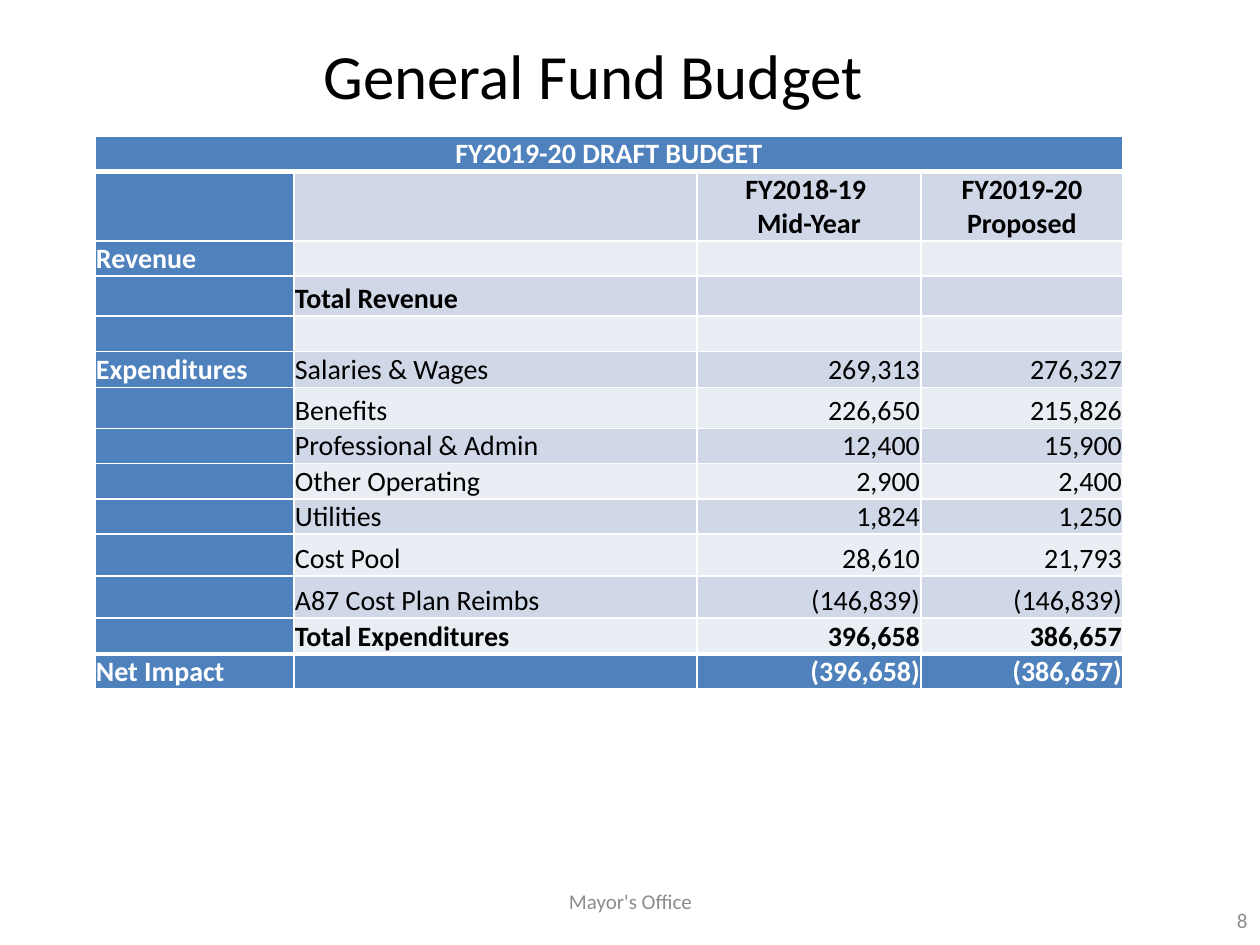
from dataclasses import dataclass

from lxml import etree
from pptx import Presentation
from pptx import util as u
from pptx.dml.color import RGBColor
from pptx.enum import text
from pptx.oxml.ns import qn

SCALE = 914400 / 126
LEFT, MID, RIGHT = text.PP_ALIGN.LEFT, text.PP_ALIGN.CENTER, text.PP_ALIGN.RIGHT


@dataclass(frozen=True)
class Theme:
    face: str = "Calibri"
    head: int = 36
    body: int = 16
    foot: int = 12
    ink: str = "000000"
    white: str = "FFFFFF"
    gray: str = "8C8C8C"
    blue: str = "4F81BD"
    bands: tuple = ("E9EDF4", "D0D8E8")


THEME = Theme()
COLS = [199, 403, 224, 202]
ROWS = [
    (35, ["FY2019-20 DRAFT BUDGET", "", "", ""]),
    (69, ["", "", "FY2018-19 \nMid-Year", "FY2019-20 Proposed"]),
    (35, ["Revenue", "", "", ""]),
    (40, ["", "Total Revenue", "", ""]),
    (35, ["", "", "", ""]),
    (36, ["Expenditures", "Salaries & Wages", "269,313", "276,327"]),
    (41, ["", "Benefits", "226,650", "215,826"]),
    (35, ["", "Professional & Admin", "12,400", "15,900"]),
    (35, ["", "Other Operating", "2,900", "2,400"]),
    (35, ["", "Utilities", "1,824", "1,250"]),
    (42, ["", "Cost Pool", "28,610", "21,793"]),
    (42, ["", "A87 Cost Plan Reimbs", "(146,839)", "(146,839)"]),
    (36, ["", "Total Expenditures", "396,658", "386,657"]),
    (35, ["Net Impact", "", "(396,658)", "(386,657)"]),
]
LAST = len(ROWS) - 1


def px(n):
    return u.Emu(round(n * SCALE))


def apply(item, **vals):
    for key, val in vals.items():
        setattr(item, key, val)


def place(shape, x, y, w, h):
    apply(shape, left=px(x), top=px(y), width=px(w), height=px(h))


def write(frame, words, size, color, align, bold=False):
    for i, line in enumerate(words.split("\n")):
        para = frame.paragraphs[0] if i == 0 else frame.add_paragraph()
        para.alignment = align
        run = para.add_run()
        run.text = line
        apply(run.font, name=THEME.face, size=u.Pt(size), bold=bold)
        run.font.color.rgb = RGBColor.from_string(color)


def edge(cell, side, width):
    props = cell._tc.get_or_add_tcPr()
    line = etree.SubElement(props, qn(f"a:ln{side}"), w=str(u.Pt(width)))
    fill = etree.SubElement(line, qn("a:solidFill"))
    etree.SubElement(fill, qn("a:srgbClr"), val=THEME.white)


def paint(cell, row, col, words):
    dark = row in (0, LAST) or col == 0
    bold = dark or row == 1 or words.startswith("Total") or row == LAST - 1
    align = MID if row < 2 else RIGHT if col > 1 else LEFT
    apply(cell, margin_left=px(1), margin_right=px(1), margin_top=px(1),
          margin_bottom=0, vertical_anchor=text.MSO_ANCHOR.BOTTOM)
    if words:
        write(cell.text_frame, words, THEME.body,
              THEME.white if dark else THEME.ink, align, bold)
    else:
        end = cell.text_frame.paragraphs[0]._p.get_or_add_endParaRPr()
        end.set("sz", str(THEME.body * 100))
    for side in "LRTB":
        thick = (side, row) in (("B", 0), ("T", 1), ("B", LAST - 1), ("T", LAST))
        edge(cell, side, 3 if thick else 1)
    cell.fill.solid()
    shade = THEME.blue if dark else THEME.bands[row % 2]
    cell.fill.fore_color.rgb = RGBColor.from_string(shade)


def add_budget(slide):
    high = sum(size for size, _ in ROWS)
    frame = slide.shapes.add_table(
        len(ROWS), len(COLS), px(95), px(136), px(sum(COLS)), px(high))
    grid = frame.table
    apply(grid, first_row=False, horz_banding=False)
    for col, wide in zip(grid.columns, COLS):
        col.width = px(wide)
    for r, (size, words) in enumerate(ROWS):
        grid.rows[r].height = px(size)
        for c, word in enumerate(words):
            paint(grid.cell(r, c), r, c, word)
    grid.cell(0, 0).merge(grid.cell(0, len(COLS) - 1))


def add_title(slide, words):
    title = slide.shapes.title
    place(title, 105, 32, 976, 84)
    apply(title.text_frame, word_wrap=True, vertical_anchor=text.MSO_ANCHOR.MIDDLE)
    write(title.text_frame, words, THEME.head, THEME.ink, MID)


def add_foot(slide, words, box, align):
    note = slide.shapes.add_textbox(0, 0, 0, 0)
    place(note, *box)
    apply(note.text_frame, word_wrap=True, vertical_anchor=text.MSO_ANCHOR.MIDDLE)
    write(note.text_frame, words, THEME.foot, THEME.gray, align)


def main():
    deck = Presentation()
    apply(deck, slide_width=px(1260), slide_height=px(945))
    slide = deck.slides.add_slide(deck.slide_layouts[5])
    add_title(slide, "General Fund Budget")
    add_budget(slide)
    add_foot(slide, "8", (1155, 895, 105, 50), RIGHT)
    add_foot(slide, "Mayor's Office", (431, 876, 399, 50), MID)
    deck.save("out.pptx")


if __name__ == "__main__":
    main()
